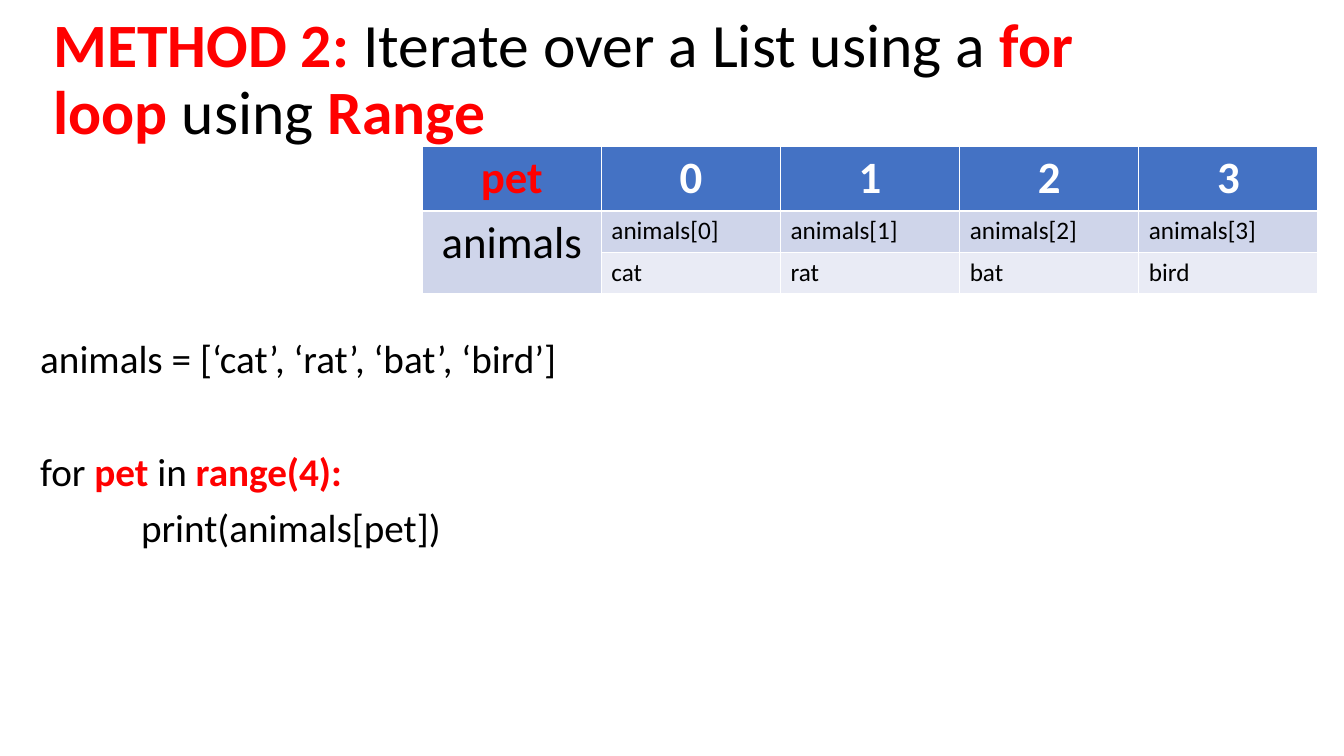
import pptx
import pptx.util
import pptx.dml.color
import pptx.enum.text
from lxml import etree
from pptx.util import Cm, Pt

RED = pptx.dml.color.RGBColor(0xFF, 0x00, 0x00)
BLACK = pptx.dml.color.RGBColor(0x00, 0x00, 0x00)
WHITE = pptx.dml.color.RGBColor(0xFF, 0xFF, 0xFF)
HEADER_BLUE = pptx.dml.color.RGBColor(0x44, 0x72, 0xC4)
BAND_DARK = pptx.dml.color.RGBColor(0xCF, 0xD5, 0xEA)
BAND_LIGHT = pptx.dml.color.RGBColor(0xE9, 0xEB, 0xF5)

FONT = "Calibri"
ANIMALS = ["cat", "rat", "bat", "bird"]


def set_font(font, size, color, bold=False):
    font.name = FONT
    font.size = Pt(size)
    font.color.rgb = color
    font.bold = bold


def write_spans(para, spans, size):
    """Fill a paragraph from (text, is_keyword) pairs; keywords are bold red."""
    set_font(para.font, size, BLACK)
    para.line_spacing = 0.9
    para.alignment = pptx.enum.text.PP_ALIGN.LEFT
    for text, is_keyword in spans:
        span = para.add_run()
        span.text = text
        if is_keyword:
            span.font.bold = True
            span.font.color.rgb = RED


def place(shape, box):
    shape.left, shape.top, shape.width, shape.height = box
    shape.text_frame.word_wrap = True
    shape.text_frame.auto_size = pptx.enum.text.MSO_AUTO_SIZE.NONE


def remove_bullet(para, indent):
    properties = para._p.get_or_add_pPr()
    properties.set("marL", str(indent))
    properties.set("indent", "0")
    bullet = etree.Element(pptx.oxml.ns.qn("a:buNone"))
    properties.insert_element_before(bullet, "a:tabLst", "a:defRPr", "a:extLst")


def add_title(page, box):
    title = page.shapes.title
    place(title, box)
    title.text_frame.vertical_anchor = pptx.enum.text.MSO_ANCHOR.MIDDLE
    write_spans(title.text_frame.paragraphs[0], [
        ("METHOD 2:", True),
        (" Iterate over a List using a ", False),
        ("for loop", True),
        (" using ", False),
        ("Range", True),
    ], 44)


def add_code(page, box):
    body = page.placeholders[1]
    place(body, box)
    frame = body.text_frame
    frame.margin_top = Cm(1.56)
    # Each line: spans, space before in points, left indent
    lines = [
        ([("animals = [‘cat’, ‘rat’, ‘bat’, ‘bird’]", False)], 0, Cm(0)),
        ([("for ", False), ("pet", True), (" in ", False), ("range(4):", True)],
         50.75, Cm(0)),
        ([("print(animals[pet])", False)], 10, Cm(2.54)),
    ]
    for number, (spans, space, indent) in enumerate(lines):
        para = frame.add_paragraph() if number else frame.paragraphs[0]
        write_spans(para, spans, 28)
        para.space_before = Pt(space)
        remove_bullet(para, indent)


def add_index_table(page, box):
    indices = range(len(ANIMALS))
    rows = [
        ["pet"] + [str(index) for index in indices],
        ["animals"] + [f"animals[{index}]" for index in indices],
        [""] + ANIMALS,
    ]
    fills = [HEADER_BLUE, BAND_DARK, BAND_LIGHT]
    table = page.shapes.add_table(len(rows), len(rows[0]), *box).table
    for row, height in zip(table.rows, [1.58, 1.04, 1.04]):
        row.height = Cm(height)
    table.cell(1, 0).merge(table.cell(2, 0))

    for row_number, texts in enumerate(rows):
        for column_number, text in enumerate(texts):
            cell = table.cell(row_number, column_number)
            if cell.is_spanned:
                continue
            cell.fill.solid()
            cell.fill.fore_color.rgb = fills[row_number]
            cell.text = text
            para = cell.text_frame.paragraphs[0]
            is_header = row_number == 0
            is_label = is_header or column_number == 0
            if is_label:
                para.alignment = pptx.enum.text.PP_ALIGN.CENTER
            color = BLACK
            if is_header:
                color = WHITE if column_number else RED
            set_font(para.font, 32 if is_label else 18, color, is_header)


def main():
    deck = pptx.Presentation()
    deck.slide_width, deck.slide_height = Cm(33.87), Cm(19.05)
    page = deck.slides.add_slide(deck.slide_layouts[1])
    add_title(page, (Cm(1.09), Cm(0.2), Cm(29.21), Cm(3.68)))
    add_code(page, (Cm(0.76), Cm(6.99), Cm(16.61), Cm(11.38)))
    add_index_table(page, (Cm(10.64), Cm(3.68), Cm(22.58), Cm(3.66)))
    deck.save("out.pptx")


if __name__ == "__main__":
    main()
